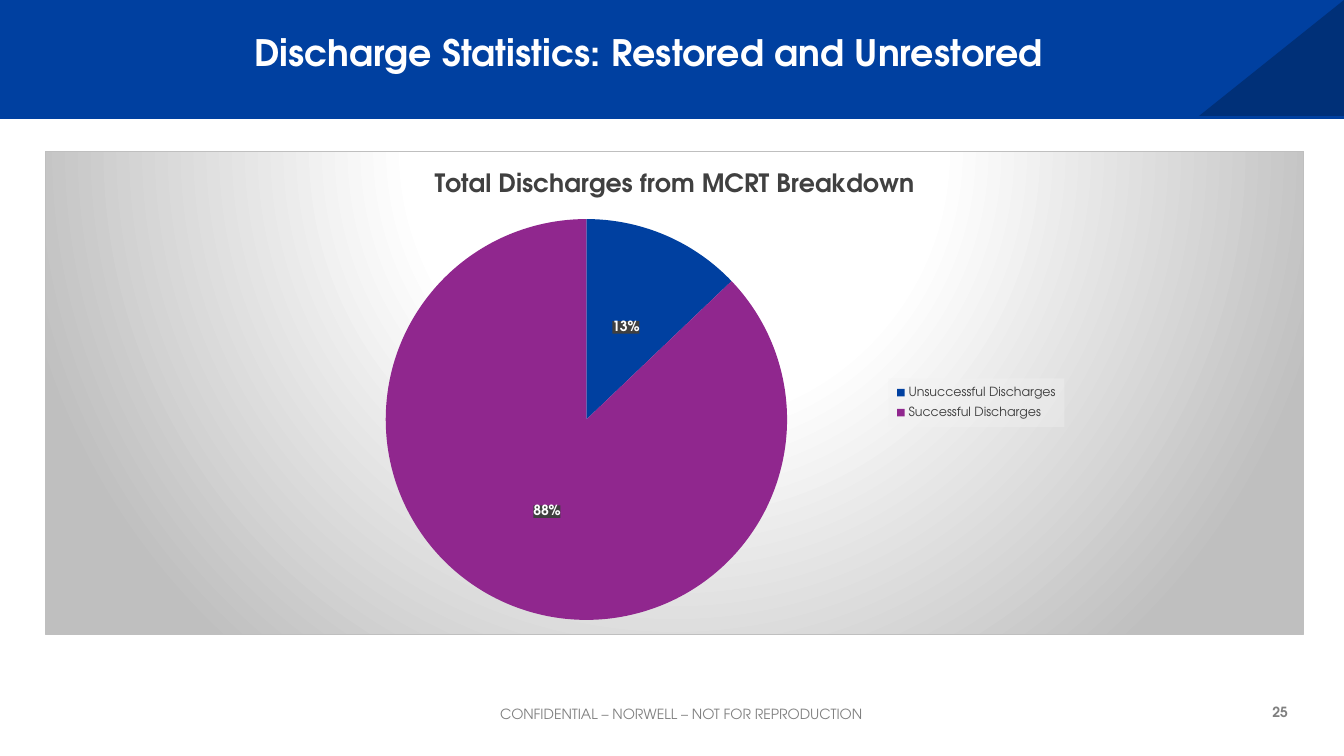
import pptx
import pptx.chart.data
import pptx.dml.color
import pptx.enum.chart
import pptx.enum.shapes
import pptx.enum.text
import pptx.oxml
import pptx.oxml.ns
import pptx.util

FONT = "TeX Gyre Adventor"
BLUE, NAVY, PURPLE = "0040A0", "003078", "90278E"
WHITE, SILVER, GREY, DARK = "FFFFFF", "BFBFBF", "808080", "404040"
ALIGN = pptx.enum.text.PP_ALIGN
ANCHOR = pptx.enum.text.MSO_ANCHOR
SHAPE = pptx.enum.shapes.MSO_SHAPE


def px(n):
    return pptx.util.Emu(round(n * 914400 / 100.8))


def rgb(color):
    return pptx.dml.color.RGBColor.from_string(color)


def set_font(font, size, color, bold=False):
    font.name, font.size, font.bold = FONT, pptx.util.Pt(size), bold
    font.color.rgb = rgb(color)


def shape_properties(content):
    """Return a chart spPr element holding the given DrawingML."""
    ns = pptx.oxml.ns.nsdecls("c", "a")
    return pptx.oxml.parse_xml(f"<c:spPr {ns}>{content}</c:spPr>")


def translucent(color, percent):
    return (f'<a:solidFill><a:srgbClr val="{color}">'
            f'<a:alpha val="{percent * 1000}"/></a:srgbClr></a:solidFill>')


def set_layout(element, index, **fractions):
    """Place a chart part at fractions of the chart, as child number index."""
    for old in element.xpath("./c:layout"):
        element.remove(old)
    target = '<c:layoutTarget val="inner"/>' if index == 0 else ""
    modes = '<c:xMode val="edge"/><c:yMode val="edge"/>'
    sizes = "".join(f'<c:{k} val="{v}"/>' for k, v in fractions.items())
    element.insert(index, pptx.oxml.parse_xml(
        f'<c:layout {pptx.oxml.ns.nsdecls("c")}><c:manualLayout>'
        f"{target}{modes}{sizes}</c:manualLayout></c:layout>"))


class Deck:
    def __init__(self):
        self.prs = pptx.Presentation()
        self.prs.slide_width, self.prs.slide_height = px(1344), px(756)
        self.slide = self.prs.slides.add_slide(self.prs.slide_layouts[6])

    def shape(self, kind, box, color):
        sp = self.slide.shapes.add_shape(kind, *map(px, box))
        sp.shadow.inherit = False
        sp.fill.solid()
        sp.fill.fore_color.rgb = rgb(color)
        sp.line.fill.background()
        return sp

    def text(self, text, box, size, color, bold=False, align=ALIGN.RIGHT,
             anchor=ANCHOR.MIDDLE, inset=0):
        tf = self.slide.shapes.add_textbox(*map(px, box)).text_frame
        tf.word_wrap = True
        tf.vertical_anchor = anchor
        tf.margin_left = tf.margin_right = px(inset)
        tf.text = text
        p = tf.paragraphs[0]
        p.alignment = align
        set_font(p.runs[0].font, size, color, bold)

    def pie(self, title, box, shares, colors):
        data = pptx.chart.data.CategoryChartData()
        data.categories = list(shares)
        data.add_series("Series 1", list(shares.values()))
        chart = self.slide.shapes.add_chart(
            pptx.enum.chart.XL_CHART_TYPE.PIE, *map(px, box), data).chart
        set_font(chart.font, 10, "000000")
        plot = chart.plots[0]
        plot.vary_by_categories = True
        self.pie_title(chart, title)
        self.pie_legend(chart)
        self.pie_slices(chart, plot.series[0], colors)
        self.pie_background(chart)
        set_layout(chart.element.xpath(".//c:plotArea")[0], 0,
                   x=0.27, y=0.14, w=0.32, h=0.83)

    def pie_title(self, chart, title):
        chart.has_title = True
        tf = chart.chart_title.text_frame
        tf.text = title
        set_font(tf.paragraphs[0].runs[0].font, 18, DARK, True)
        chart.chart_title.include_in_layout = False

    def pie_legend(self, chart):
        chart.has_legend = True
        chart.legend.position = pptx.enum.chart.XL_LEGEND_POSITION.RIGHT
        chart.legend.include_in_layout = False
        set_font(chart.legend.font, 9, DARK)
        legend = chart.element.xpath(".//c:legend")[0]
        set_layout(legend, 1, x=0.67, y=0.47, w=0.14, h=0.1)
        legend.xpath("./c:overlay")[0].addnext(
            shape_properties(translucent("F2F2F2", 39)))

    def pie_slices(self, chart, series, colors):
        for i, color in enumerate(colors):
            fill = series.points[i].format.fill
            fill.solid()
            fill.fore_color.rgb = rgb(color)
        labels = series.data_labels
        labels.show_value = True
        labels.number_format = '0"%"'
        labels.number_format_is_linked = False
        labels.position = pptx.enum.chart.XL_LABEL_POSITION.CENTER
        set_font(labels.font, 10, WHITE, True)
        chart.element.xpath(".//c:dLbls/c:numFmt")[0].addnext(
            shape_properties(translucent(DARK, 75)))

    def pie_background(self, chart):
        stops = "".join(
            f'<a:gs pos="{pos * 1000}"><a:srgbClr val="{color}"/></a:gs>'
            for pos, color in ((0, WHITE), (39, WHITE), (100, SILVER)))
        chart.element.xpath("./c:chart")[0].addnext(shape_properties(
            f'<a:gradFill><a:gsLst>{stops}</a:gsLst><a:path path="circle">'
            '<a:fillToRect l="50000" t="-80000" r="50000" b="180000"/>'
            '</a:path></a:gradFill><a:ln w="9525"><a:solidFill>'
            f'<a:srgbClr val="{SILVER}"/></a:solidFill></a:ln>'))


def main():
    deck = Deck()
    deck.shape(SHAPE.RECTANGLE, (0, 0, 1344, 119), BLUE)
    corner = deck.shape(SHAPE.ISOSCELES_TRIANGLE, (1199, 0, 145, 116), NAVY)
    corner.adjustments[0] = 1
    deck.text("25", (1244, 695, 44, 33), 10, GREY, bold=True)
    deck.text("CONFIDENTIAL – NORWELL – NOT FOR REPRODUCTION",
              (485, 697, 377, 33), 10, GREY)
    deck.text("Discharge Statistics: Restored and Unrestored",
              (44, 25, 1210, 68), 26, WHITE, bold=True, align=ALIGN.CENTER,
              anchor=ANCHOR.TOP, inset=10)
    deck.pie("Total Discharges from MCRT Breakdown", (45, 151, 1259, 484),
             {"Unsuccessful Discharges": 13, "Successful Discharges": 88},
             (BLUE, PURPLE))
    deck.prs.save("out.pptx")


if __name__ == "__main__":
    main()
